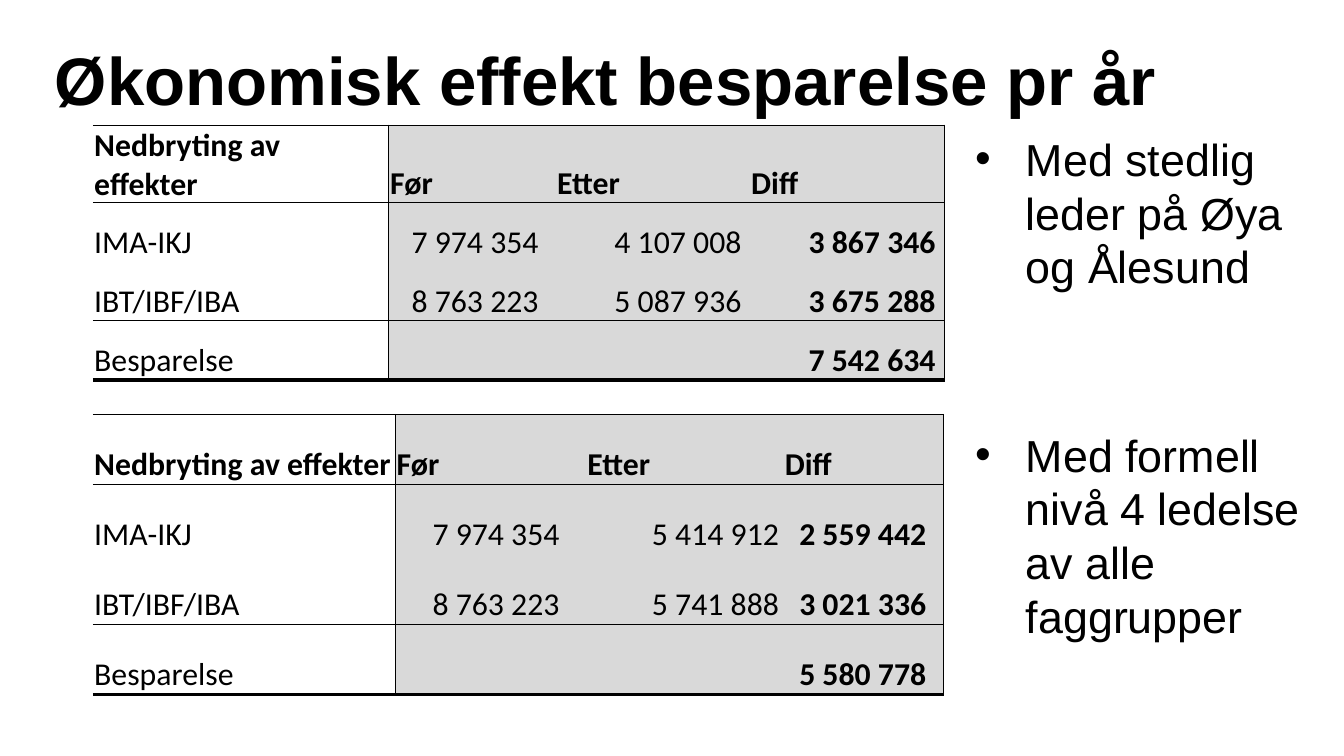
from lxml.etree import SubElement
from pptx import Presentation
from pptx.dml.color import RGBColor
from pptx.enum.text import MSO_ANCHOR
from pptx.oxml.ns import qn
from pptx.util import Pt

COLORS = {"ink": "000000", "gray": "D9D9D9"}
TITLE = "Økonomisk effekt besparelse pr år"
HEAD = ["Nedbryting av effekter", "Før", "Etter", "Diff"]
TABLES = [
    {"top": 67, "cols": [158.5, 89.5, 104, 104], "rows": [40.3] + [31.7] * 3,
     "indents": [0, 11.5, 30.7, 30.7],
     "body": [["IMA-IKJ", "7 974 354", "4 107 008", "3 867 346"],
              ["IBT/IBF/IBA", "8 763 223", "5 087 936", "3 675 288"],
              ["Besparelse", "", "", "7 542 634"]]},
    {"top": 222, "cols": [162, 102.2, 105.8, 85.7], "rows": [37.5] * 4,
     "indents": [0, 19.2, 34.6, 7.7],
     "body": [["IMA-IKJ", "7 974 354", "5 414 912", "2 559 442"],
              ["IBT/IBF/IBA", "8 763 223", "5 741 888", "3 021 336"],
              ["Besparelse", "", "", "5 580 778"]]},
]
# Text and the space before it
POINTS = [("Med stedlig leder på Øya og Ålesund", 0),
          ("Med formell nivå 4 ledelse av alle faggrupper", 72)]
LEFT, INSET = 49.8, 0.7
THIN, THICK = 0.5, 2
RULES = [THIN, THIN, 0, THIN, THICK]  # horizontal lines, top to bottom
BARS = [0, THIN, 0, 0, THIN]  # vertical lines, left to right


def style(para, size, face, bold=False):
    font = para.font
    font.size, font.name, font.bold = Pt(size), face, bold
    font.color.rgb = RGBColor.from_string(COLORS["ink"])


def border(cell, row, col):
    """Draw the four edges of a cell, before its fill is set."""
    props = cell._tc.get_or_add_tcPr()
    edges = {"lnL": BARS[col], "lnR": BARS[col + 1],
             "lnT": RULES[row], "lnB": RULES[row + 1]}
    for tag, width in edges.items():
        line = SubElement(props, qn(f"a:{tag}"), w=str(Pt(width)))
        if width:
            fill = SubElement(line, qn("a:solidFill"))
            SubElement(fill, qn("a:srgbClr"), val=COLORS["ink"])
        else:
            SubElement(line, qn("a:noFill"))


def add_grid(slide, data):
    lines = [HEAD] + data["body"]
    grid = slide.shapes.add_table(
        len(lines), len(HEAD), Pt(LEFT), Pt(data["top"]),
        Pt(sum(data["cols"])), Pt(sum(data["rows"]))).table
    grid.first_row = grid.horz_banding = False
    for col, width in zip(grid.columns, data["cols"]):
        col.width = Pt(width)
    for row, height in zip(grid.rows, data["rows"]):
        row.height = Pt(height)
    for r, line in enumerate(lines):
        for c, text in enumerate(line):
            cell = grid.cell(r, c)
            border(cell, r, c)
            if c:
                cell.fill.solid()
                cell.fill.fore_color.rgb = RGBColor.from_string(COLORS["gray"])
            else:
                cell.fill.background()
            cell.vertical_anchor = MSO_ANCHOR.BOTTOM
            indent = data["indents"][c] if r else 0
            cell.margin_left = Pt(INSET + indent)
            cell.margin_top = cell.margin_right = Pt(INSET)
            cell.margin_bottom = 0
            cell.text = text
            style(cell.text_frame.paragraphs[0], 17, "Calibri",
                  r == 0 or c == len(HEAD) - 1)


def add_box(slide, left, top, width, height):
    frame = slide.shapes.add_textbox(
        Pt(left), Pt(top), Pt(width), Pt(height)).text_frame
    frame.word_wrap = True
    return frame


def main():
    deck = Presentation()
    deck.slide_width, deck.slide_height = Pt(720), Pt(405)
    slide = deck.slides.add_slide(deck.slide_layouts[6])

    title = add_box(slide, 22.3, 16.6, 648, 51)
    title.vertical_anchor = MSO_ANCHOR.MIDDLE
    title.text = TITLE
    style(title.paragraphs[0], 36, "Arial", True)

    for data in TABLES:
        add_grid(slide, data)

    notes = add_box(slide, 515.5, 67, 193, 297)
    for i, (text, gap) in enumerate(POINTS):
        para = notes.add_paragraph() if i else notes.paragraphs[0]
        para.text = text
        para.line_spacing = Pt(28.8)
        para.space_before = Pt(gap)
        props = para._p.get_or_add_pPr()
        props.set("marL", str(Pt(27)))
        props.set("indent", str(Pt(-27)))
        SubElement(props, qn("a:buFont"), typeface="Arial")
        SubElement(props, qn("a:buChar"), char="•")
        style(para, 24, "Arial")

    deck.save("out.pptx")


if __name__ == "__main__":
    main()
